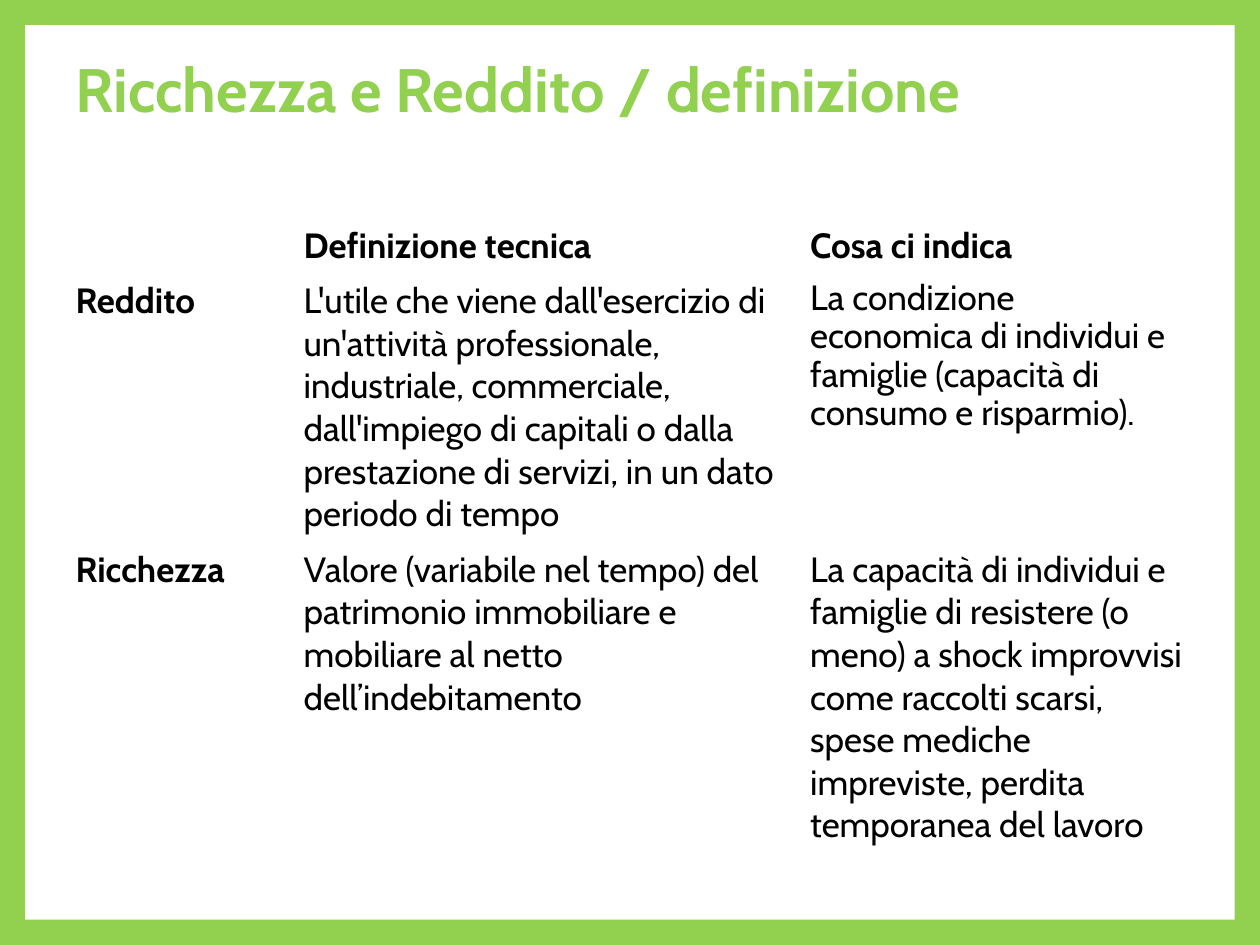
import pptx
import pptx.util
import pptx.dml.color
import pptx.enum.shapes
import pptx.enum.text
from pptx.util import Inches

GREEN, WHITE, BLACK = "92D050", "FFFFFF", "000000"
FONT = "Cabin"
COLUMN_WIDTHS = (1.81, 4.02, 3.17)
ROW_HEIGHT = 0.41
ROWS = (
    ("", "Definizione tecnica", "Cosa ci indica"),
    (
        "Reddito",
        "L'utile che viene dall'esercizio di un'attività professionale, "
        "industriale, commerciale, dall'impiego di capitali o dalla "
        "prestazione di servizi, in un dato periodo di tempo",
        "La condizione economica di individui e famiglie "
        "(capacità di consumo e risparmio).",
    ),
    (
        "Ricchezza",
        "Valore (variabile nel tempo) del patrimonio immobiliare e "
        "mobiliare al netto dell’indebitamento",
        "La capacità di individui e famiglie di resistere (o meno) a shock "
        "improvvisi come raccolti scarsi, spese mediche impreviste, "
        "perdita temporanea del lavoro",
    ),
)


def set_color(target, value):
    """Colour a fill or a font with a hex string."""
    if hasattr(target, "solid"):
        target.solid()
        target.fore_color.rgb = pptx.dml.color.RGBColor.from_string(value)
    else:
        target.color.rgb = pptx.dml.color.RGBColor.from_string(value)


def style_paragraph(para, size, color, bold):
    para.alignment = pptx.enum.text.PP_ALIGN.LEFT
    para.font.name = FONT
    para.font.size = pptx.util.Pt(size)
    para.font.bold = bold
    set_color(para.font, color)


def add_frame(page, left, top, width, height):
    """White panel that leaves the green background as a border."""
    set_color(page.background.fill, GREEN)
    panel = page.shapes.add_shape(
        pptx.enum.shapes.MSO_SHAPE.RECTANGLE, left, top, width, height
    )
    panel.shadow.inherit = False
    set_color(panel.fill, WHITE)
    panel.line.fill.background()
    # Send the panel behind the title
    page.shapes.element.insert(2, panel.element)


def add_title(page, left, top, width, height):
    box = page.shapes.title
    box.left, box.top, box.width, box.height = left, top, width, height
    frame = box.text_frame
    frame.text = "Ricchezza e Reddito / definizione"
    frame.vertical_anchor = pptx.enum.text.MSO_ANCHOR.MIDDLE
    style_paragraph(frame.paragraphs[0], 35, GREEN, True)


def add_definitions(page, left, top, width, height):
    table = page.shapes.add_table(
        len(ROWS), len(COLUMN_WIDTHS), left, top, width, height
    ).table
    table.first_row = table.horz_banding = False
    for column, column_width in zip(table.columns, COLUMN_WIDTHS):
        column.width = Inches(column_width)
    for row_index, texts in enumerate(ROWS):
        table.rows[row_index].height = Inches(ROW_HEIGHT)
        for column_index, text in enumerate(texts):
            cell = table.cell(row_index, column_index)
            cell.fill.background()
            cell.text = text
            is_heading = row_index == 0 or column_index == 0
            style_paragraph(cell.text_frame.paragraphs[0], 20, BLACK, is_heading)
    # The income meaning is set a little tighter
    table.cell(1, 2).text_frame.paragraphs[0].line_spacing = 0.9


def main():
    deck = pptx.Presentation()
    deck.slide_width, deck.slide_height = Inches(10), Inches(7.5)
    page = deck.slides.add_slide(deck.slide_layouts[5])
    add_frame(page, Inches(0.2), Inches(0.2), Inches(9.6), Inches(7.1))
    add_title(page, Inches(0.5), Inches(0.3), Inches(9), Inches(0.79))
    add_definitions(
        page, Inches(0.5), Inches(1.73), Inches(9), Inches(ROW_HEIGHT * len(ROWS))
    )
    deck.save("out.pptx")


if __name__ == "__main__":
    main()
